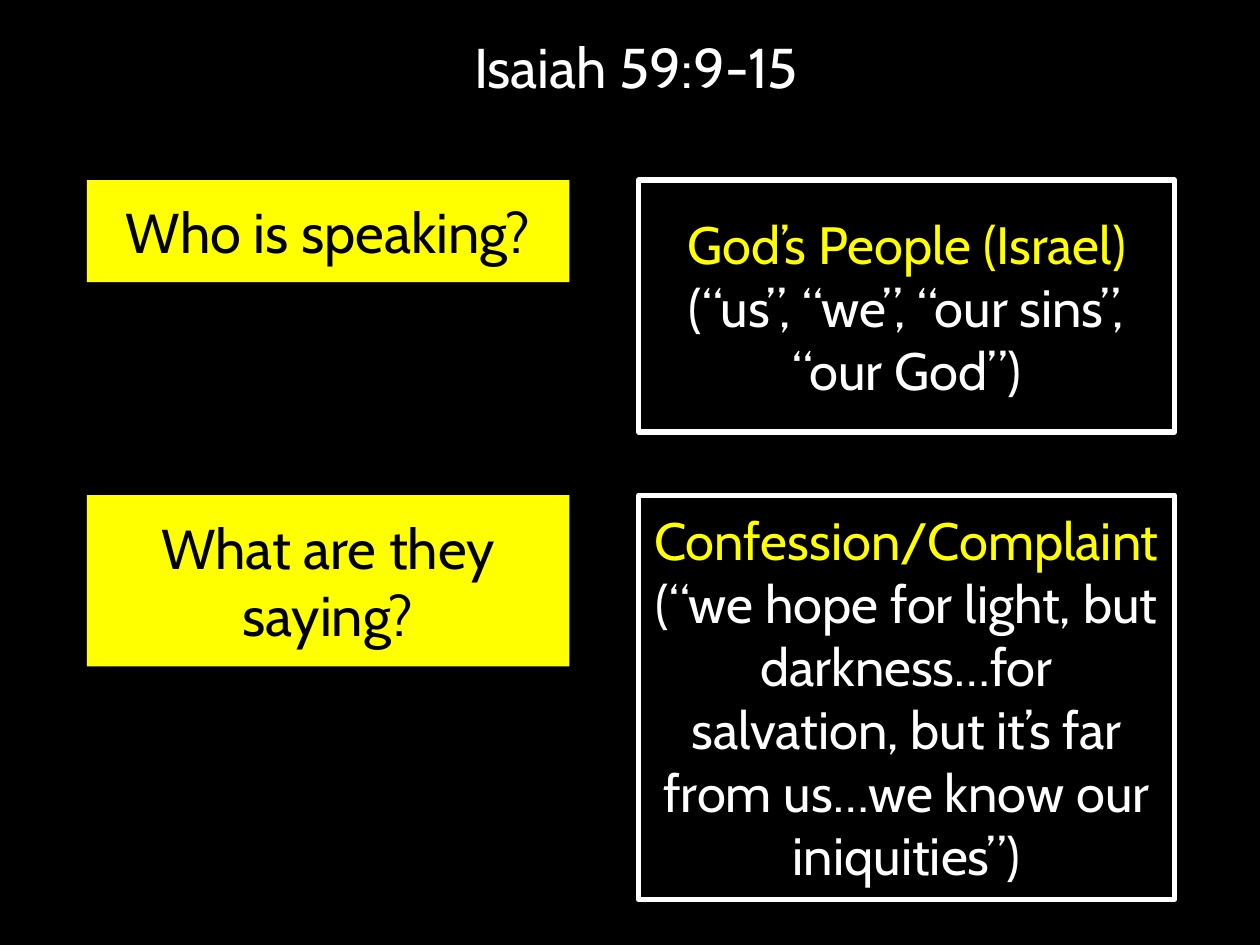
from pptx import Presentation
from pptx.dml.color import RGBColor
from pptx.enum import shapes, text
from pptx.util import Inches, Pt

BLACK = RGBColor(0, 0, 0)
WHITE = RGBColor(255, 255, 255)
YELLOW = RGBColor(255, 255, 0)

LEFT, RIGHT = 0.69, 5.07
FRAME = {"word_wrap": True, "vertical_anchor": text.MSO_ANCHOR.MIDDLE}


def write(box, lines, size):
    frame = box.text_frame
    for key, val in FRAME.items():
        setattr(frame, key, val)
    for i, (words, tint) in enumerate(lines):
        para = frame.paragraphs[0] if i == 0 else frame.add_paragraph()
        para.alignment = text.PP_ALIGN.CENTER
        run = para.add_run()
        run.text = words
        for key, val in {"name": "Cabin", "size": Pt(size)}.items():
            setattr(run.font, key, val)
        run.font.color.rgb = tint


def block(left, top, wide, high):
    box = slide.shapes.add_shape(
        shapes.MSO_SHAPE.RECTANGLE,
        Inches(left), Inches(top), Inches(wide), Inches(high))
    box.shadow.inherit = False
    return box


deck = Presentation()
deck.slide_width = Inches(10)
deck.slide_height = Inches(7.5)
slide = deck.slides.add_slide(deck.slide_layouts[6])
slide.background.fill.solid()
slide.background.fill.fore_color.rgb = BLACK

title = slide.shapes.add_textbox(
    Inches(LEFT), Inches(0.26), Inches(8.62), Inches(0.6))
write(title, [(" Isaiah 59:9-15", WHITE)], 32)
title.text_frame.paragraphs[0].line_spacing = 0.9

rows = [
    (1.43, 0.81, "Who is speaking?", 2, "God’s People (Israel)",
     "(“us”, “we”, “our sins”, “our God”)"),
    (3.93, 1.36, "What are they saying?", 3.21, "Confession/Complaint",
     "(“we hope for light, but darkness…for salvation, but it’s far "
     "from us…we know our iniquities”)"),
]

for top, high, ask, tall, head, quote in rows:
    label = block(LEFT, top, 3.83, high)
    label.fill.solid()
    label.fill.fore_color.rgb = YELLOW
    label.line.fill.background()
    write(label, [(ask, BLACK)], 32)

    reply = block(RIGHT, top, 4.25, tall)
    reply.fill.background()
    reply.line.color.rgb = WHITE
    reply.line.width = Pt(3)
    write(reply, [(head, YELLOW), (quote, WHITE)], 30)

deck.save("out.pptx")
